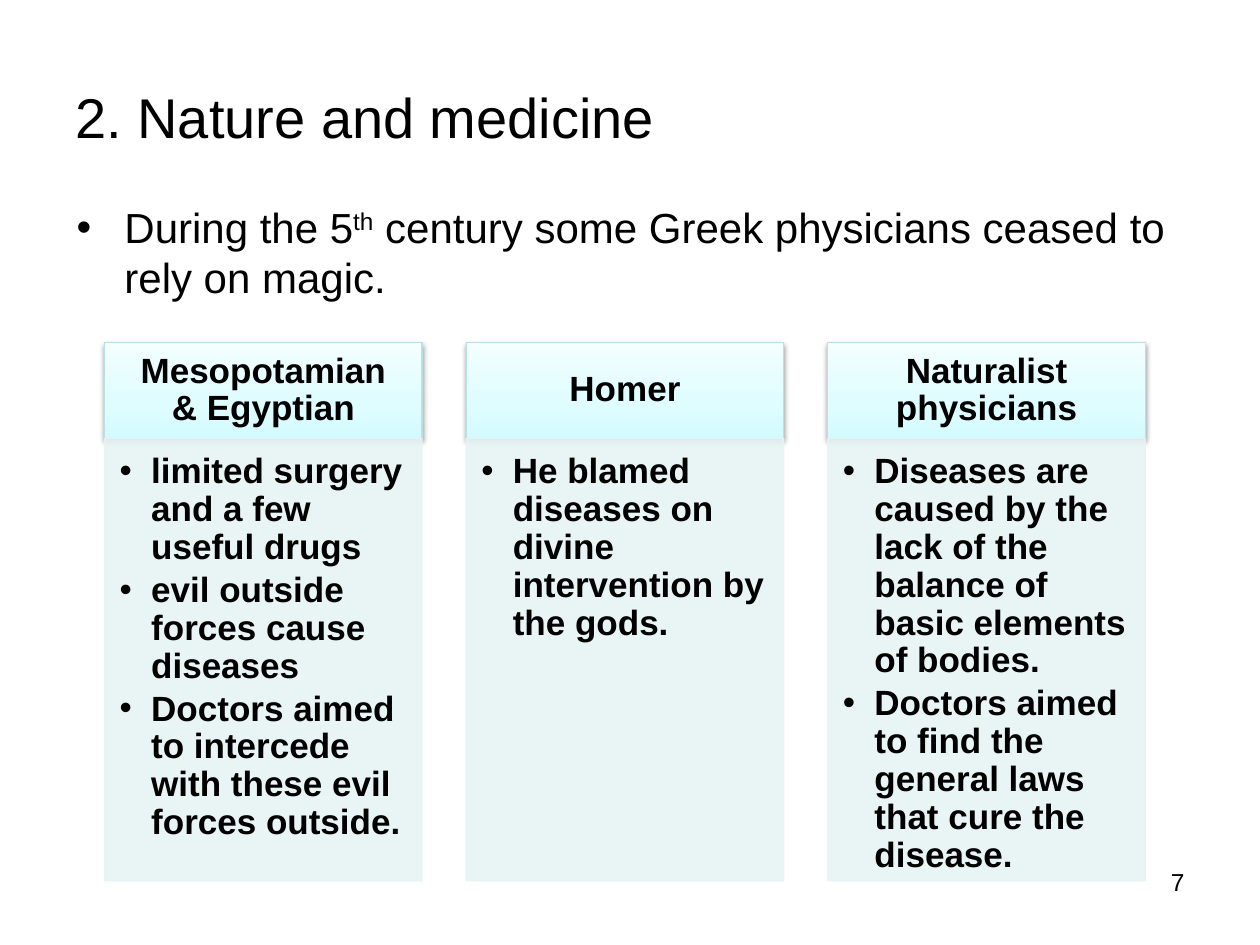
from dataclasses import dataclass

from lxml import etree
from pptx import Presentation
from pptx.dml.color import RGBColor
from pptx.enum.shapes import MSO_SHAPE
from pptx.enum.text import MSO_ANCHOR, PP_ALIGN
from pptx.oxml import parse_xml
from pptx.oxml.ns import nsdecls, qn
from pptx.util import Inches, Pt

RECTANGLE = MSO_SHAPE.RECTANGLE
TOP, MIDDLE = MSO_ANCHOR.TOP, MSO_ANCHOR.MIDDLE
LEFT, CENTER, RIGHT = PP_ALIGN.LEFT, PP_ALIGN.CENTER, PP_ALIGN.RIGHT

# Column grid, in inches
FIRST_LEFT, COLUMN_WIDTH, COLUMN_STEP = 0.83, 2.52, 2.87
HEADER_TOP, HEADER_HEIGHT, DETAIL_HEIGHT = 2.72, 0.76, 3.51

HEADER_STOPS = ((0, "D3FBFF"), (35, "DFFCFF"), (100, "F2FEFF"))
HEADER_LINE, DETAIL_FILL = "BBE0E3", "E7F3F4"


@dataclass(frozen=True)
class Column:
    heading: str
    points: tuple[str, ...]


COLUMNS = (
    Column("Mesopotamian & Egyptian", (
        "limited surgery and a few useful drugs",
        "evil outside forces cause diseases",
        "Doctors aimed to intercede with these evil forces outside.")),
    Column("Homer", (
        "He blamed diseases on divine intervention by the gods.",)),
    Column("Naturalist physicians", (
        "Diseases are caused by the lack of the balance of basic elements of bodies.",
        "Doctors aimed to find the general laws that cure the disease.")),
)


def color(value: str) -> RGBColor:
    return RGBColor.from_string(value)


def set_frame(shape, anchor=TOP, insets=(0.1, 0.05, 0.1, 0.05)):
    frame = shape.text_frame
    frame.word_wrap = True
    frame.vertical_anchor = anchor
    (frame.margin_left, frame.margin_top,
     frame.margin_right, frame.margin_bottom) = map(Inches, insets)
    return frame


def style(para, size: int, bold: bool = False, align=LEFT) -> None:
    para.alignment = align
    font = para.font
    font.name, font.size, font.bold = "Arial", Pt(size), bold
    font.color.rgb = color("000000")


def add_bullet(para, indent: float) -> None:
    properties = para._p.get_or_add_pPr()
    properties.set("marL", str(Inches(indent)))
    properties.set("indent", str(-Inches(indent)))
    etree.SubElement(properties, qn("a:buFont")).set("typeface", "Arial")
    etree.SubElement(properties, qn("a:buChar")).set("char", "•")


def add_text_box(page, area: tuple, anchor=TOP):
    return set_frame(page.shapes.add_textbox(*map(Inches, area)), anchor)


def add_panel(page, left: float, top: float, height: float, line: str):
    panel = page.shapes.add_shape(
        RECTANGLE, *map(Inches, (left, top, COLUMN_WIDTH, height)))
    panel.shadow.inherit = False
    panel.line.color.rgb = color(line)
    panel.line.width = Pt(0.75)
    return panel


def add_header(page, left: float, heading: str) -> None:
    panel = add_panel(page, left, HEADER_TOP, HEADER_HEIGHT, HEADER_LINE)
    stops = "".join(f'<a:gs pos="{share * 1000}"><a:srgbClr val="{value}"/></a:gs>'
                    for share, value in HEADER_STOPS)
    gradient = parse_xml(f'<a:gradFill {nsdecls("a")} rotWithShape="1"><a:gsLst>{stops}'
                         '</a:gsLst><a:lin ang="16200000" scaled="0"/></a:gradFill>')
    properties = panel._element.spPr
    properties.find(qn("a:prstGeom")).addnext(gradient)
    shadow = parse_xml(
        f'<a:outerShdw {nsdecls("a")} blurRad="{Pt(3.1)}" dist="{Pt(1.6)}" dir="5400000"'
        ' rotWithShape="0"><a:srgbClr val="000000"><a:alpha val="38000"/></a:srgbClr>'
        '</a:outerShdw>')
    properties.find(qn("a:effectLst")).append(shadow)

    para = set_frame(panel, MIDDLE, (0.16, 0.09, 0.16, 0.09)).paragraphs[0]
    para.text = heading
    para.line_spacing = 0.9
    style(para, 20, True, CENTER)


def add_details(page, left: float, points: tuple[str, ...]) -> None:
    panel = add_panel(page, left, HEADER_TOP + HEADER_HEIGHT, DETAIL_HEIGHT, DETAIL_FILL)
    panel.fill.solid()
    panel.fill.fore_color.rgb = color(DETAIL_FILL)
    for tint in panel._element.spPr.iter(qn("a:srgbClr")):
        etree.SubElement(tint, qn("a:alpha")).set("val", "90000")

    frame = set_frame(panel, TOP, (0.12, 0.12, 0.13, 0.12))
    for index, point in enumerate(points):
        para = frame.add_paragraph() if index else frame.paragraphs[0]
        para.text = point
        add_bullet(para, 0.25)
        para.line_spacing = 0.9
        para.space_after = Pt(3)
        style(para, 20, True)


def main() -> None:
    deck = Presentation()
    deck.slide_width, deck.slide_height = Inches(10), Inches(7.5)
    page = deck.slides.add_slide(deck.slide_layouts[6])

    # Title
    title = add_text_box(page, (0.5, 0.3, 9, 1.25), MIDDLE).paragraphs[0]
    title.text = "2. Nature and medicine"
    style(title, 32)

    # Opening statement with a raised ordinal
    opening = add_text_box(page, (0.51, 1.55, 9.06, 1)).paragraphs[0]
    add_bullet(opening, 0.38)
    style(opening, 24)
    for text, raised in (("During the 5", False), ("th", True),
                         (" century some Greek physicians ceased to rely on magic.", False)):
        span = opening.add_run()
        span.text = text
        if raised:
            span.font._element.set("baseline", "30000")

    # Slide number
    number = add_text_box(page, (7.17, 6.83, 2.33, 0.52)).paragraphs[0]
    number.text = "7"
    style(number, 14, align=RIGHT)

    # Three columns of views on disease
    for index, column in enumerate(COLUMNS):
        left = FIRST_LEFT + index * COLUMN_STEP
        add_header(page, left, column.heading)
        add_details(page, left, column.points)

    deck.save("out.pptx")


if __name__ == "__main__":
    main()
